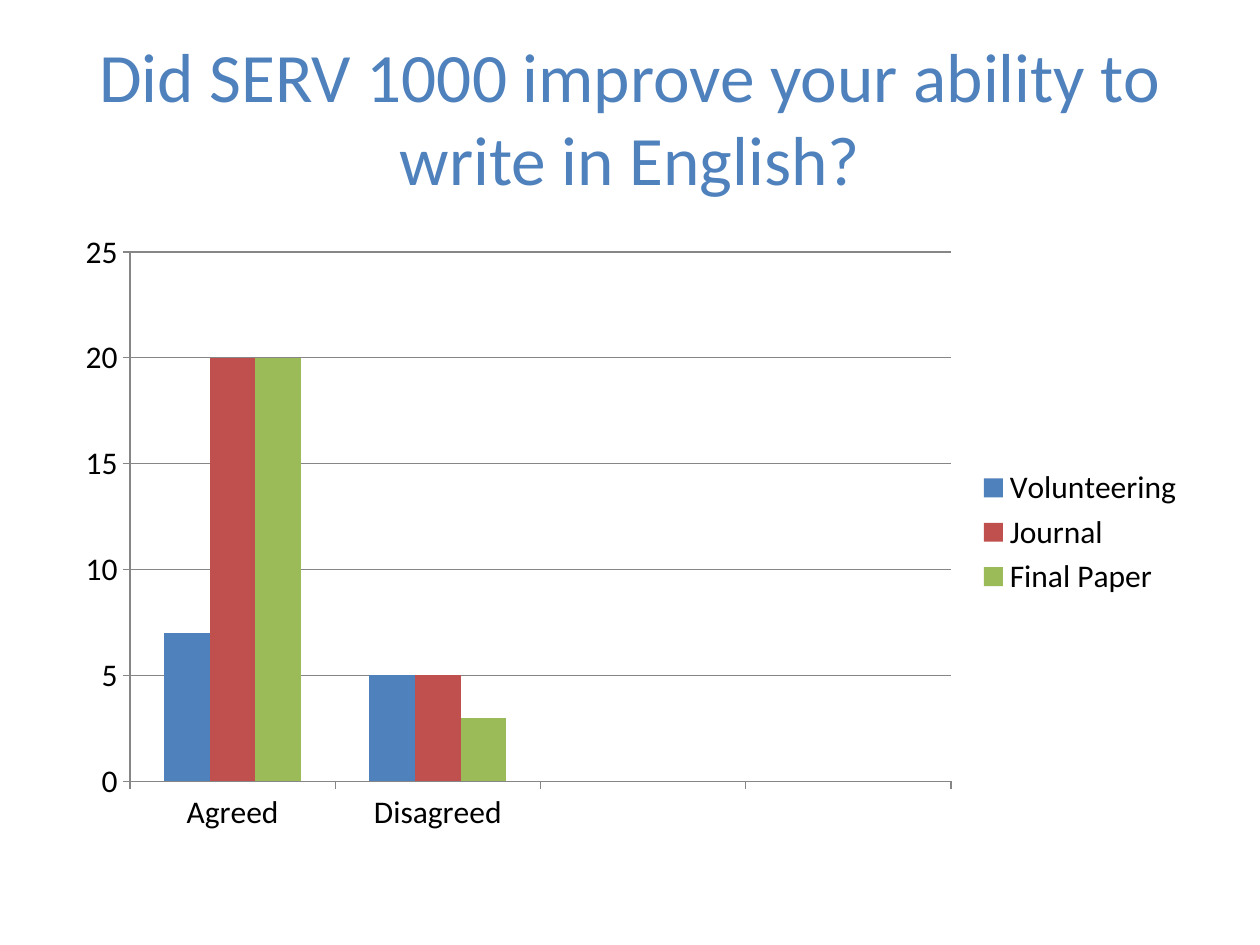
from pptx import Presentation
from pptx.chart.data import CategoryChartData as ChartData
from pptx.dml.color import RGBColor
from pptx.enum.chart import XL_CHART_TYPE as Kind, XL_LEGEND_POSITION as Side
from pptx.enum.chart import XL_TICK_MARK as Tick
from pptx.enum.text import MSO_ANCHOR as Anchor, PP_ALIGN as Align
from pptx.util import Pt

BLUE = RGBColor(0x4F, 0x81, 0xBD)
RED = RGBColor(0xC0, 0x50, 0x4D)
GREEN = RGBColor(0x9B, 0xBB, 0x59)
GRAY = RGBColor(0x86, 0x86, 0x86)
BLACK = RGBColor(0, 0, 0)
FONT = "Calibri"

prs = Presentation()
prs.slide_width, prs.slide_height = Pt(720), Pt(540)
slide = prs.slides.add_slide(prs.slide_layouts[5])

# Title
title = slide.shapes.title
title.left, title.top, title.width, title.height = Pt(36), Pt(21.6), Pt(648), Pt(90)
frame = title.text_frame
frame.text = "Did SERV 1000 improve your ability to write in English?"
frame.word_wrap = True
frame.vertical_anchor = Anchor.MIDDLE
para = frame.paragraphs[0]
para.alignment = Align.CENTER
font = para.runs[0].font
font.name, font.size = FONT, Pt(39.6)
font.color.rgb = BLUE

# Survey answers, with two unused categories on the right
rows = [
    ("Volunteering", (7, 5, None, None), BLUE),
    ("Journal", (20, 5, None, None), RED),
    ("Final Paper", (20, 3, None, None), GREEN),
]
data = ChartData()
data.categories = ["Agreed", "Disagreed", "", ""]
for name, vals, color in rows:
    data.add_series(name, vals)

# Column chart
chart = slide.shapes.add_chart(
    Kind.COLUMN_CLUSTERED, Pt(36), Pt(126), Pt(648), Pt(356.4), data).chart
chart.has_title = False
chart.font.name, chart.font.size = FONT, Pt(18)
chart.font.color.rgb = BLACK
plot = chart.plots[0]
plot.gap_width, plot.overlap = 150, 0
plot.vary_by_categories = False
for bars, (name, vals, color) in zip(plot.series, rows):
    bars.format.fill.solid()
    bars.format.fill.fore_color.rgb = color

# Axes and gridlines
scale = chart.value_axis
scale.minimum_scale, scale.maximum_scale, scale.major_unit = 0, 25, 5
scale.has_major_gridlines = True
for axis in (chart.category_axis, scale):
    axis.major_tick_mark, axis.minor_tick_mark = Tick.OUTSIDE, Tick.NONE
for part in (chart.category_axis, scale, scale.major_gridlines):
    part.format.line.color.rgb = GRAY
    part.format.line.width = Pt(0.75)

# Legend
chart.has_legend = True
chart.legend.position = Side.RIGHT
chart.legend.include_in_layout = False

prs.save("out.pptx")
